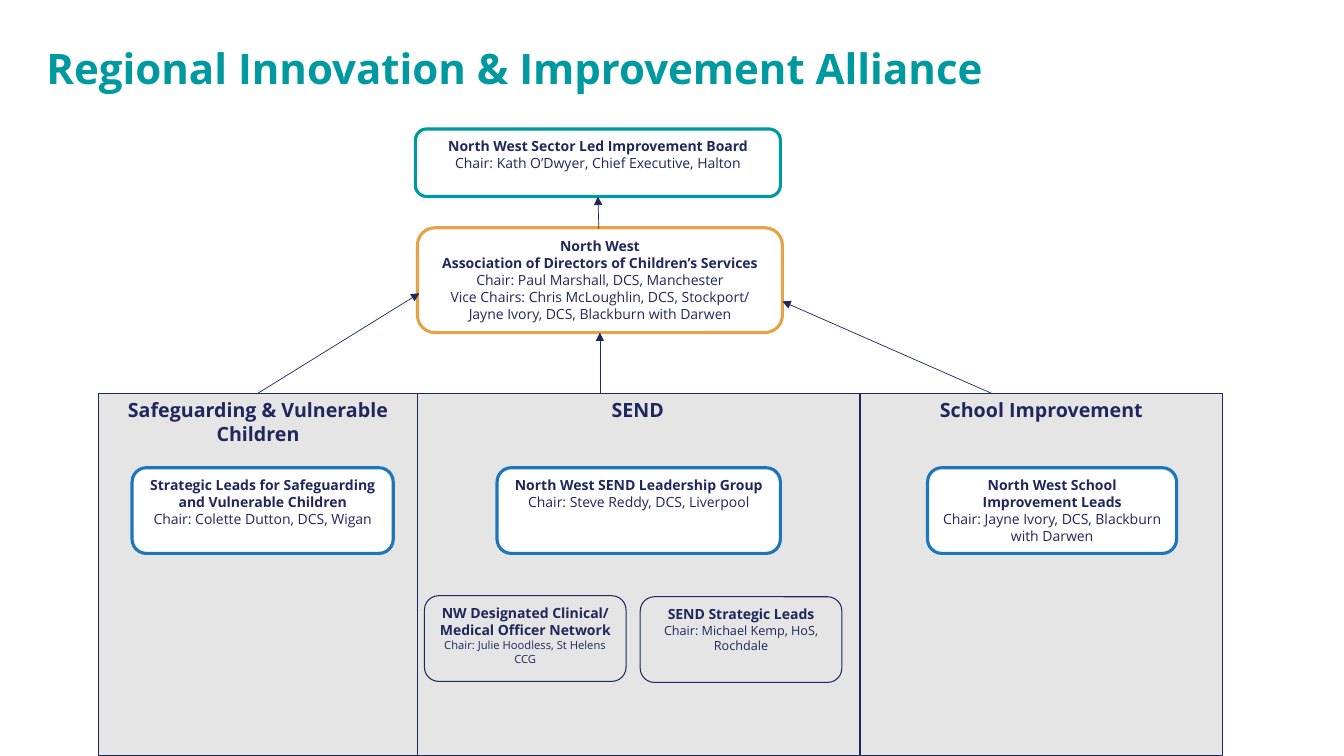
from typing import NamedTuple

from lxml import etree
from pptx import Presentation
from pptx.dml.color import RGBColor
from pptx.enum.shapes import MSO_CONNECTOR, MSO_SHAPE
from pptx.enum.text import MSO_ANCHOR, PP_ALIGN
from pptx.oxml.ns import qn
from pptx.util import Inches, Pt

FONT = "Open Sans"
TEAL = RGBColor(0x00, 0x99, 0xA0)
NAVY = RGBColor(0x20, 0x27, 0x5C)
GOLD = RGBColor(0xE3, 0xA4, 0x47)
BLUE = RGBColor(0x1C, 0x76, 0xBB)
GREY = RGBColor(0xE5, 0xE5, 0xE5)
WHITE = RGBColor(0xFF, 0xFF, 0xFF)

COLUMN_TOP, COLUMN_HEIGHT = 3.9, 3.6
LEADS_TOP, GROUP_HEIGHT = 4.64, 0.85


class Column(NamedTuple):
    left: float
    width: float
    heading: str


class Group(NamedTuple):
    left: float
    top: float
    width: float
    height: float
    names: list[str]
    chairs: list[str]
    line: RGBColor
    fill: RGBColor = WHITE
    line_width: float = 2.25
    chair_size: int = 10


class Arrow(NamedTuple):
    x1: float
    y1: float
    x2: float
    y2: float


COLUMNS = [
    Column(8.53, 3.6, "School Improvement"),
    Column(4.12, 4.41, "SEND"),
    Column(0.98, 3.16, "Safeguarding & Vulnerable Children"),
]

GROUPS = [
    Group(4.12, 1.28, 3.62, 0.67, ["North West Sector Led Improvement Board"],
          ["Chair: Kath O’Dwyer, Chief Executive, Halton"], TEAL),
    Group(4.14, 2.26, 3.62, 1.04,
          ["North West", "Association of Directors of Children’s Services"],
          ["Chair: Paul Marshall, DCS, Manchester",
           "Vice Chairs: Chris McLoughlin, DCS, Stockport/",
           "Jayne Ivory, DCS, Blackburn with Darwen"], GOLD),
    Group(1.31, LEADS_TOP, 2.59, GROUP_HEIGHT,
          ["Strategic Leads for Safeguarding and Vulnerable Children"],
          ["Chair: Colette Dutton, DCS, Wigan"], BLUE),
    Group(4.93, LEADS_TOP, 2.81, GROUP_HEIGHT, ["North West SEND Leadership Group"],
          ["Chair: Steve Reddy, DCS, Liverpool"], BLUE),
    Group(9.2, LEADS_TOP, 2.47, GROUP_HEIGHT, ["North West School Improvement Leads"],
          ["Chair: Jayne Ivory, DCS, Blackburn with Darwen"], BLUE),
    Group(4.21, 5.91, 2, GROUP_HEIGHT,
          ["NW Designated Clinical/ Medical Officer Network"],
          ["Chair: Julie Hoodless, St Helens CCG"], NAVY, GREY, 0.75, 8),
    Group(6.35, 5.92, 2, GROUP_HEIGHT, ["SEND Strategic Leads"],
          ["Chair: Michael Kemp, HoS, Rochdale"], NAVY, GREY, 0.75, 9),
]

ARROWS = [
    Arrow(5.94, 2.27, 5.93, 1.95),
    Arrow(2.56, COLUMN_TOP, 4.16, 2.91),
    Arrow(5.95, COLUMN_TOP, 5.95, 3.3),
    Arrow(9.83, COLUMN_TOP, 7.76, 2.99),
]


def add_run(p, text: str, size: float, color: RGBColor, bold: bool) -> None:
    r = p.add_run()
    r.text = text
    r.font.name = FONT
    r.font.size = Pt(size)
    r.font.bold = bold
    r.font.color.rgb = color


def add_box(s, kind: MSO_SHAPE, left: float, top: float, width: float, height: float,
            fill: RGBColor, line: RGBColor, line_width: float,
            lines: list[tuple[str, int, bool]]) -> None:
    sp = s.shapes.add_shape(kind, Inches(left), Inches(top), Inches(width), Inches(height))
    sp.shadow.inherit = False
    sp.fill.solid()
    sp.fill.fore_color.rgb = fill
    sp.line.color.rgb = line
    sp.line.width = Pt(line_width)
    tf = sp.text_frame
    tf.word_wrap = True
    tf.vertical_anchor = MSO_ANCHOR.TOP
    for i, (text, size, bold) in enumerate(lines):
        p = tf.add_paragraph() if i else tf.paragraphs[0]
        p.alignment = PP_ALIGN.CENTER
        add_run(p, text, size, NAVY, bold)


def add_column(s, c: Column) -> None:
    add_box(s, MSO_SHAPE.RECTANGLE, c.left, COLUMN_TOP, c.width, COLUMN_HEIGHT,
            GREY, NAVY, 0.75, [(c.heading, 14, True)])


def add_group(s, g: Group) -> None:
    lines = [(name, 10, True) for name in g.names]
    lines += [(chair, g.chair_size, False) for chair in g.chairs]
    add_box(s, MSO_SHAPE.ROUNDED_RECTANGLE, g.left, g.top, g.width, g.height,
            g.fill, g.line, g.line_width, lines)


def add_arrow(s, a: Arrow) -> None:
    cxn = s.shapes.add_connector(MSO_CONNECTOR.STRAIGHT, Inches(a.x1), Inches(a.y1),
                                 Inches(a.x2), Inches(a.y2))
    cxn.line.color.rgb = NAVY
    cxn.line.width = Pt(0.5)
    etree.SubElement(cxn.line._get_or_add_ln(), qn("a:tailEnd"), type="triangle")
    etree.SubElement(cxn._element.spPr, qn("a:effectLst"))


def add_title(s, text: str) -> None:
    title = s.shapes.title
    title.left, title.top = Inches(0.36), Inches(0.37)
    title.width, title.height = Inches(10.18), Inches(0.61)
    tf = title.text_frame
    tf.word_wrap = True
    tf.vertical_anchor = MSO_ANCHOR.MIDDLE
    p = tf.paragraphs[0]
    p.alignment = PP_ALIGN.LEFT
    add_run(p, text, 30, TEAL, True)


def main() -> None:
    prs = Presentation()
    prs.slide_width, prs.slide_height = Inches(13.33), Inches(7.5)
    s = prs.slides.add_slide(prs.slide_layouts[5])
    add_title(s, "Regional Innovation & Improvement Alliance")

    # Themed columns, then the groups on top of them
    for column in COLUMNS:
        add_column(s, column)
    for group in GROUPS:
        add_group(s, group)

    # Reporting lines
    for arrow in ARROWS:
        add_arrow(s, arrow)

    prs.save("out.pptx")


if __name__ == "__main__":
    main()
